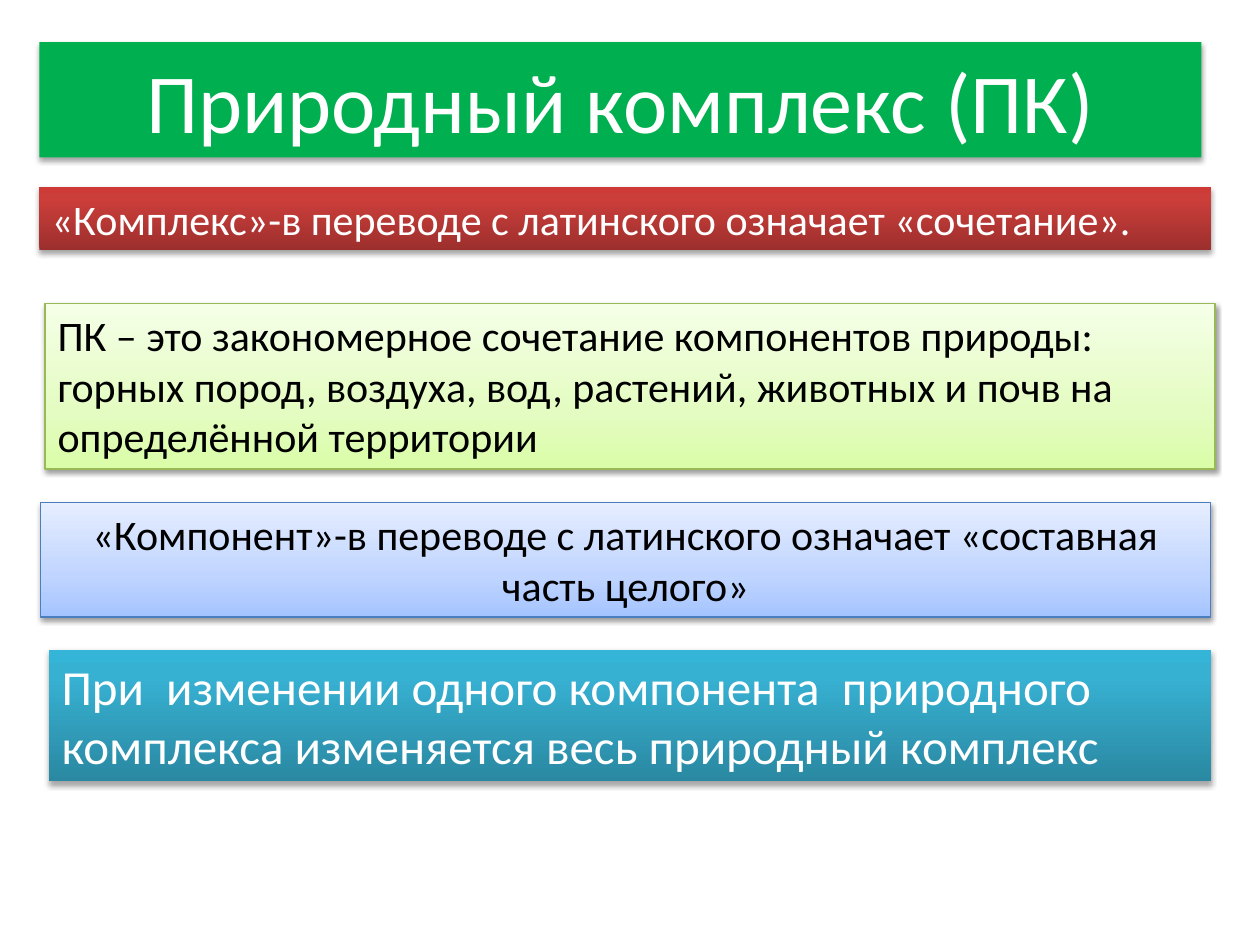
"""Build a slide that defines the natural complex and its components."""
from copy import deepcopy

from lxml import etree
from pptx import Presentation
from pptx.dml.color import RGBColor
from pptx.enum.text import MSO_ANCHOR, MSO_AUTO_SIZE, PP_ALIGN
from pptx.oxml.ns import qn
from pptx.util import Pt

LEFT, CENTER = PP_ALIGN.LEFT, PP_ALIGN.CENTER
TOP, MIDDLE = MSO_ANCHOR.TOP, MSO_ANCHOR.MIDDLE
FIXED, GROW = MSO_AUTO_SIZE.NONE, MSO_AUTO_SIZE.SHAPE_TO_FIT_TEXT

WHITE = RGBColor(0xFF, 0xFF, 0xFF)
BLACK = RGBColor(0x00, 0x00, 0x00)
GREEN = RGBColor(0x00, 0xB0, 0x50)
LIME_EDGE = RGBColor(0x98, 0xB9, 0x55)
BLUE_EDGE = RGBColor(0x4B, 0x7E, 0xBC)
RED_FADE = (RGBColor(0x9C, 0x2F, 0x2D), RGBColor(0xCB, 0x3E, 0x3A), RGBColor(0xCE, 0x3B, 0x37))
LIME_FADE = (RGBColor(0xDA, 0xFD, 0xA7), RGBColor(0xE4, 0xFC, 0xC2), RGBColor(0xF5, 0xFF, 0xE7))
BLUE_FADE = (RGBColor(0xA4, 0xC4, 0xFF), RGBColor(0xBF, 0xD4, 0xFF), RGBColor(0xE6, 0xEE, 0xFF))
TEAL_FADE = (RGBColor(0x2A, 0x88, 0xA2), RGBColor(0x37, 0xB1, 0xD2), RGBColor(0x34, 0xB4, 0xD6))


class Panels:
    """Hold the shared style and draw panels on the current slide."""

    font = "Calibri"

    def __init__(self, slide):
        self.slide = slide

    def title(self, text, left, top, width, height):
        """Place the title on a solid band."""
        heading = self.slide.shapes.title
        heading.left, heading.top, heading.width, heading.height = map(
            Pt, (left, top, width, height))
        heading.fill.solid()
        heading.fill.fore_color.rgb = GREEN
        self.shadow(heading, 1.8, 35)
        self.wording(heading, [text], 48, WHITE, CENTER, MIDDLE, FIXED)

    def definition(self, lines, left, top, width, height, fade,
                   size=24, align=LEFT, edge=None):
        """Add a gradient panel, pale with dark text when it has an edge."""
        panel = self.slide.shapes.add_textbox(*map(Pt, (left, top, width, height)))
        self.gradient(panel, fade, 0.35 if edge else 0.8)
        if edge:
            panel.line.color.rgb = edge
            panel.line.width = Pt(0.75)
        self.shadow(panel, *((1.6, 38) if edge else (1.8, 35)))
        self.wording(panel, lines, size, BLACK if edge else WHITE, align, TOP, GROW)

    def gradient(self, panel, fade, middle):
        """Fill from bottom to top with three colours."""
        panel.fill.gradient()
        panel.fill.gradient_angle = 90
        stops = panel.element.spPr.find(".//" + qn("a:gsLst"))
        stops.insert(1, deepcopy(stops[0]))
        for stop, colour, position in zip(panel.fill.gradient_stops, fade, (0, middle, 1)):
            stop.color.rgb = colour
            stop.position = position

    def shadow(self, panel, distance, opacity):
        """Give a soft shadow straight below."""
        panel.shadow.inherit = False
        effects = panel.element.spPr.find(qn("a:effectLst"))
        outer = etree.SubElement(effects, qn("a:outerShdw"), blurRad=str(Pt(3.1)),
                                 dist=str(Pt(distance)), dir="5400000", rotWithShape="0")
        colour = etree.SubElement(outer, qn("a:srgbClr"), val=str(BLACK))
        etree.SubElement(colour, qn("a:alpha"), val=str(opacity * 1000))

    def wording(self, panel, lines, size, colour, align, anchor, fit):
        """Set each line as a paragraph with one run."""
        frame = panel.text_frame
        frame.word_wrap = True
        frame.auto_size = fit
        frame.vertical_anchor = anchor
        for index, line in enumerate(lines):
            paragraph = frame.add_paragraph() if index else frame.paragraphs[0]
            paragraph.alignment = align
            run = paragraph.add_run()
            run.text = line
            run.font.name = self.font
            run.font.size = Pt(size)
            run.font.color.rgb = colour


def main():
    """Compose and save the slide."""
    deck = Presentation()
    deck.slide_width, deck.slide_height = Pt(720), Pt(540)
    slide = deck.slides.add_slide(deck.slide_layouts[0])
    subtitle = slide.placeholders[1].element
    subtitle.getparent().remove(subtitle)

    panels = Panels(slide)
    panels.title("Природный комплекс (ПК)", 22.5, 24, 664, 66)
    panels.definition(["«Комплекс»-в переводе с латинского означает «сочетание»."],
                      22.5, 106.8, 669.5, 36.3, RED_FADE)
    panels.definition(["ПК – это закономерное сочетание компонентов природы: горных пород, "
                       "воздуха, вод, растений, животных и почв на определённой территории"],
                      25.8, 173.5, 668.5, 94.5, LIME_FADE, edge=LIME_EDGE)
    panels.definition(["«Компонент»-в переводе с латинского означает «составная часть целого»"],
                      23, 287.2, 668.8, 65.4, BLUE_FADE, align=CENTER, edge=BLUE_EDGE)
    panels.definition(["При  изменении одного компонента  природного",
                       "комплекса изменяется весь природный комплекс"],
                      28.1, 371.5, 664, 75.1, TEAL_FADE, size=28)
    deck.save("out.pptx")


if __name__ == "__main__":
    main()
